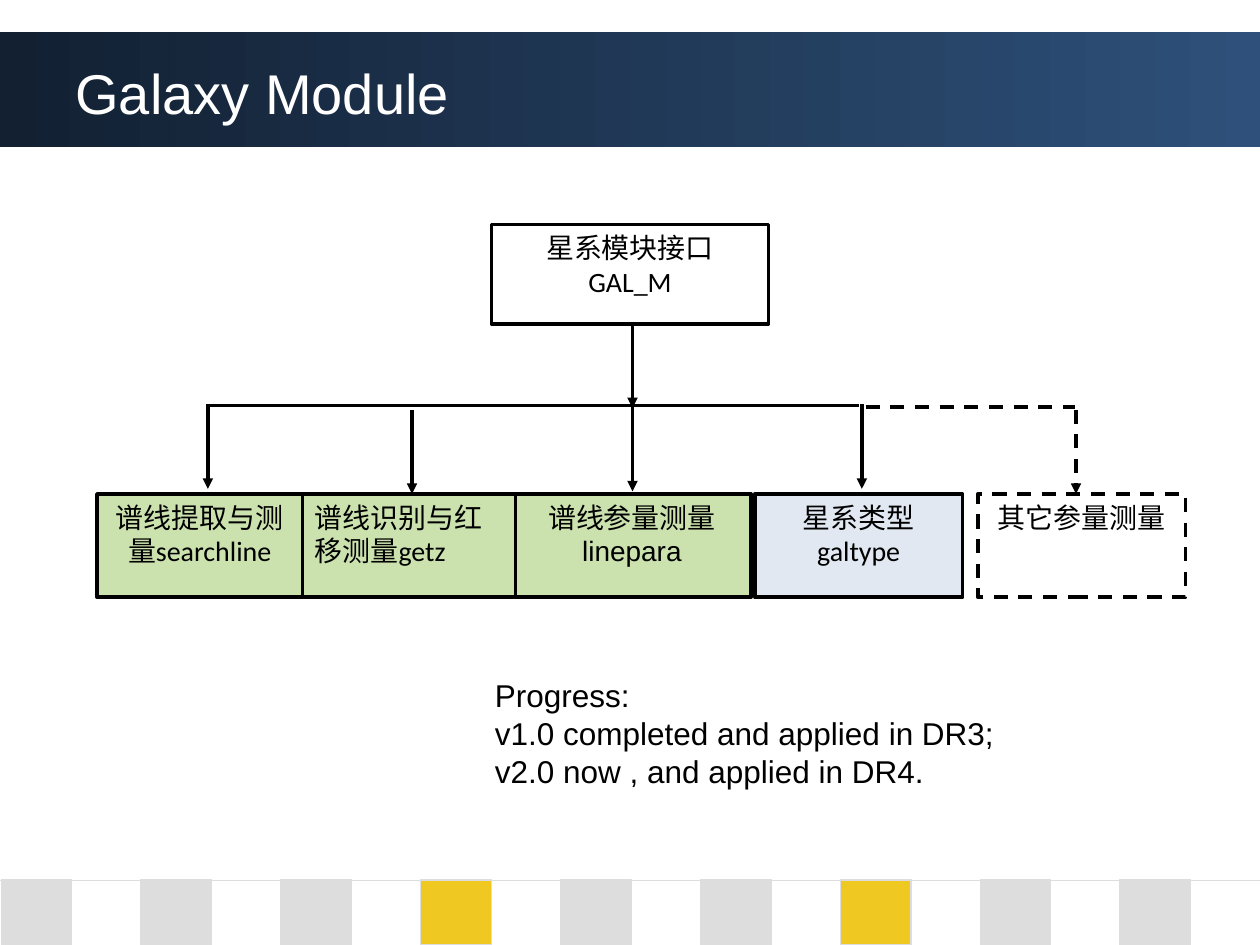
from lxml.etree import SubElement
from pptx import Presentation
from pptx.dml.color import RGBColor
from pptx.enum.dml import MSO_LINE
from pptx.enum.shapes import MSO_CONNECTOR, MSO_SHAPE
from pptx.enum.text import MSO_ANCHOR, PP_ALIGN
from pptx.oxml.ns import qn
from pptx.util import Inches, Pt

BLACK, WHITE, GREY, YELLOW = "000000", "FFFFFF", "DDDDDD", "EFC821"
GREEN, PALE_BLUE = "CBE2AF", "E1E8F1"


def color(hex_string):
    return RGBColor.from_string(hex_string)


class SlideBuilder:
    line_width = 2

    def __init__(self, slide):
        self.slide = slide

    def rectangle(self, left, top, width, height, fill=None, line=None, line_width=line_width):
        shape = self.slide.shapes.add_shape(
            MSO_SHAPE.RECTANGLE, Inches(left), Inches(top), Inches(width), Inches(height))
        shape.shadow.inherit = False
        if fill:
            shape.fill.solid()
            shape.fill.fore_color.rgb = color(fill)
        if line:
            shape.line.color.rgb = color(line)
            shape.line.width = Pt(line_width)
        else:
            shape.line.fill.background()
        return shape

    def gradient_band(self, left, top, width, height, colors):
        fill = self.rectangle(left, top, width, height).fill
        fill.gradient()
        fill.gradient_angle = 0
        for stop, stop_color in zip(fill.gradient_stops, colors):
            stop.color.rgb = color(stop_color)

    def set_text(self, text_frame, text, size, font="Arial", text_color=BLACK,
                 align=PP_ALIGN.LEFT):
        text_frame.text = text
        for paragraph in text_frame.paragraphs:
            paragraph.alignment = align
            for run in paragraph.runs:
                run.font.size = Pt(size)
                run.font.name = font
                run.font.color.rgb = color(text_color)

    def module_box(self, left, top, width, height, text, fill,
                   font="Calibri", align=PP_ALIGN.CENTER, dashed=False):
        shape = self.rectangle(left, top, width, height, fill, BLACK)
        if dashed:
            shape.line.dash_style = MSO_LINE.DASH
        shape.text_frame.word_wrap = True
        shape.text_frame.vertical_anchor = MSO_ANCHOR.TOP
        self.set_text(shape.text_frame, text, 16, font, align=align)

    def text_box(self, left, top, width, height, text, size,
                 text_color=BLACK, anchor=MSO_ANCHOR.TOP, wrap=True):
        box = self.slide.shapes.add_textbox(
            Inches(left), Inches(top), Inches(width), Inches(height))
        box.text_frame.word_wrap = wrap
        box.text_frame.vertical_anchor = anchor
        self.set_text(box.text_frame, text, size, text_color=text_color)

    def connector(self, start_x, start_y, end_x, end_y, arrow=False, dashed=False,
                  line_color=BLACK, line_width=line_width):
        connector = self.slide.shapes.add_connector(
            MSO_CONNECTOR.STRAIGHT, Inches(start_x), Inches(start_y),
            Inches(end_x), Inches(end_y))
        connector.line.color.rgb = color(line_color)
        connector.line.width = Pt(line_width)
        if dashed:
            connector.line.dash_style = MSO_LINE.DASH
        properties = connector._element.spPr
        if arrow:
            SubElement(properties.find(qn("a:ln")), qn("a:tailEnd"), type="triangle")
        SubElement(properties, qn("a:effectLst"))


def main():
    presentation = Presentation()
    presentation.slide_width, presentation.slide_height = Inches(10), Inches(7.5)
    builder = SlideBuilder(presentation.slides.add_slide(presentation.slide_layouts[6]))

    builder.gradient_band(0, 0.25, 10, 0.92, ("122032", "2E507A"))
    for index in range(9):
        fill = YELLOW if index in (3, 6) else GREY
        builder.rectangle(0.01 + 1.11 * index, 6.98, 0.56, 0.52, fill, GREY, 0.75)
    builder.connector(0, 6.99, 10, 6.99, line_color=GREY, line_width=0.75)
    builder.text_box(0.5, 0.3, 9, 0.86, "Galaxy Module", 32, WHITE, MSO_ANCHOR.MIDDLE)

    builder.module_box(3.9, 1.78, 2.2, 0.79, "星系模块接口\nGAL_M", WHITE)
    modules = (
        (4.07, 1.89, "谱线参量测量\nlinepara", GREEN, {"font": "Arial"}),
        (5.99, 1.65, "星系类型\ngaltype", PALE_BLUE, {}),
        (0.77, 1.63, "谱线提取与测量searchline", GREEN, {}),
        (2.4, 1.69, "谱线识别与红移测量getz", GREEN, {"align": PP_ALIGN.LEFT}),
        (7.76, 1.65, "其它参量测量", WHITE, {"dashed": True}),
    )
    for left, width, text, fill, style in modules:
        builder.module_box(left, 3.92, width, 0.82, text, fill, **style)

    builder.connector(5.02, 2.57, 5.02, 3.24, arrow=True)
    builder.connector(1.66, 3.22, 6.82, 3.22)
    builder.connector(6.87, 3.23, 8.53, 3.23, dashed=True)
    branches = ((1.65, 3.21, False), (3.27, 3.25, False), (5.02, 3.23, False),
                (6.84, 3.21, False), (8.54, 3.25, True))
    for x, top, dashed in branches:
        builder.connector(x, top, x, top + 0.67, arrow=True, dashed=dashed)

    builder.text_box(
        3.83, 5.32, 4.16, 1,
        "Progress:\nv1.0 completed and applied in DR3;\nv2.0 now , and applied in DR4.",
        18, wrap=False)
    presentation.save("out.pptx")


if __name__ == "__main__":
    main()
